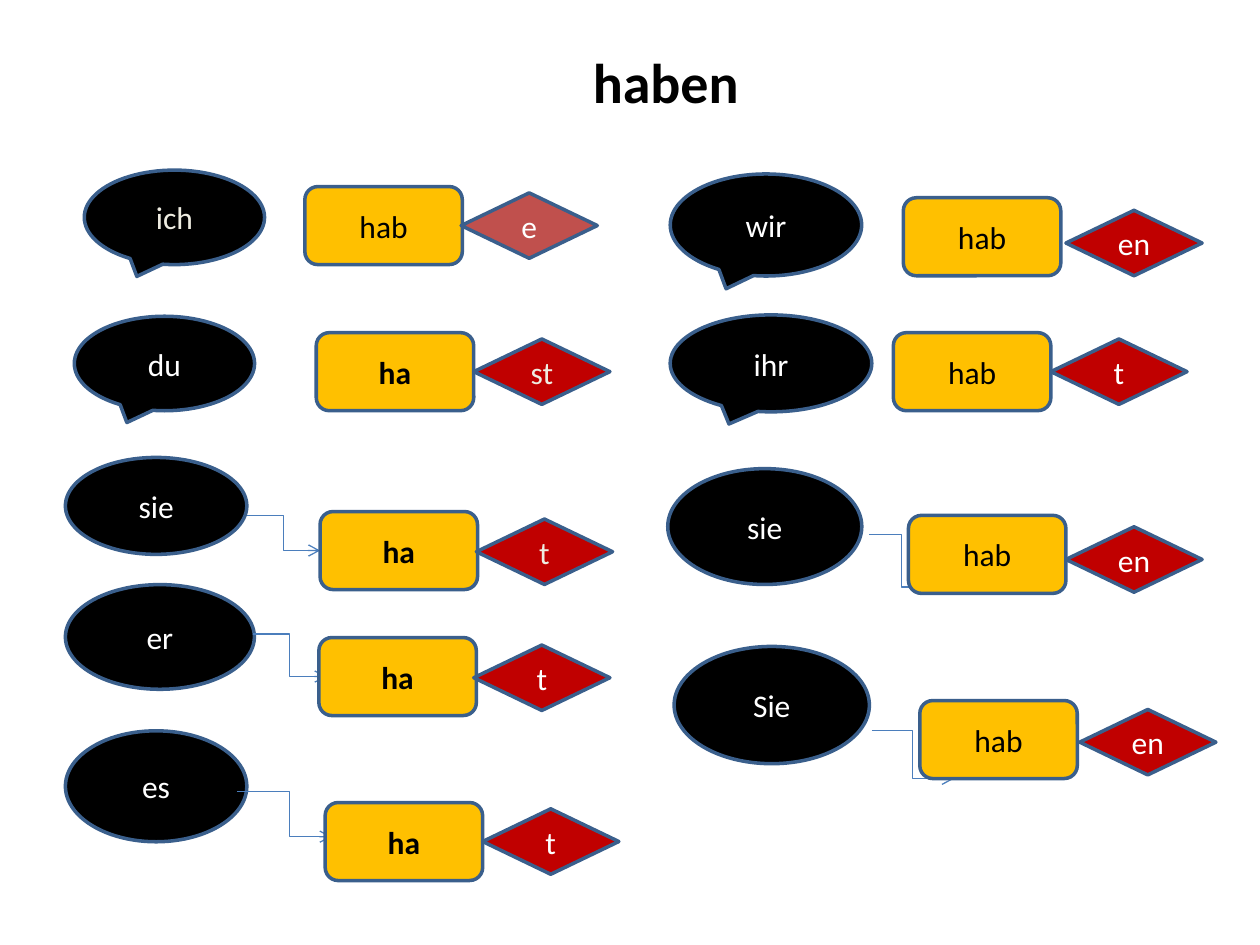
import lxml.etree
import pptx
import pptx.dml.color
import pptx.enum.shapes
import pptx.enum.text
import pptx.oxml.ns
import pptx.util

Pt = pptx.util.Pt
SHAPES = pptx.enum.shapes.MSO_SHAPE

COLOURS = {
    "black": "000000", "white": "FFFFFF", "cream": "EEECE1", "gold": "FFC000",
    "red": "C00000", "rose": "C0504D", "outline": "3A5F8C", "arrow": "4B7EBC",
}
FONT = "Calibri"
CALLOUT, ELLIPSE = SHAPES.OVAL_CALLOUT, SHAPES.OVAL
STEM_SIZE = (90, 44.6)
ENDING_SIZE = (77.8, 37.4)

TITLE = ("haben", (220.3, 23.8, 320.4, 46))

# pronoun, bubble shape, bubble left/top/width/height, text colour
PRONOUNS = [
    ("ich", CALLOUT, (48.2, 97.2, 103, 54), "cream"),
    ("du", CALLOUT, (42.5, 180.7, 103, 54), "white"),
    ("sie", ELLIPSE, (37.4, 261.4, 103.7, 55.4), "white"),
    ("er", ELLIPSE, (37.4, 334.1, 108, 59.8), "white"),
    ("es", ELLIPSE, (37.4, 417.6, 103.7, 63.4), "white"),
    ("wir", CALLOUT, (383, 99.4, 109.4, 58.3), "white"),
    ("ihr", CALLOUT, (383, 180, 115.2, 55.4), "white"),
    ("sie", ELLIPSE, (381.6, 267.8, 110.9, 66.2), "white"),
    ("Sie", ELLIPSE, (385.2, 369.4, 111.6, 67), "white"),
]

# start, end, share of the width at which the line bends
ARROWS = [
    ((141.1, 294.5), (182.9, 314.6), 0.5),
    ((144.7, 362.2), (186.5, 386.6), 0.5),
    ((135.4, 452.2), (189.4, 478.1), 0.56),
    ((496.8, 305.3), (533.5, 335.5), 0.5),
    ((498.2, 417.6), (545, 445), 0.5),
]

# stem, left/top, bold because irregular
STEMS = [
    ("hab", (174.2, 106.6), False),
    ("ha", (180.7, 190.1), True),
    ("ha", (182.9, 292.3), True),
    ("ha", (182.2, 364.3), True),
    ("ha", (185.8, 458.6), True),
    ("hab", (516.2, 113), False),
    ("hab", (510.5, 190.1), False),
    ("hab", (519.1, 294.5), False),
    ("hab", (525.6, 400.3), False),
]

# ending, left/top, fill, text colour
ENDINGS = [
    ("e", (263.5, 110.2), "rose", "white"),
    ("st", (270.7, 193.7), "red", "cream"),
    ("t", (272.2, 296.6), "red", "cream"),
    ("t", (270.7, 368.6), "red", "white"),
    ("t", (275.8, 462.2), "red", "white"),
    ("en", (609.1, 120.2), "red", "white"),
    ("t", (600.5, 193.7), "red", "white"),
    ("en", (609.1, 301), "red", "white"),
    ("en", (617, 405.4), "red", "white"),
]


def rgb(name):
    return pptx.dml.color.RGBColor.from_string(COLOURS[name])


def write(shape, text, size, colour, bold=False):
    shape.text_frame.word_wrap = True
    para = shape.text_frame.paragraphs[0]
    para.text = text
    para.alignment = pptx.enum.text.PP_ALIGN.CENTER
    para.font.name = FONT
    para.font.size = Pt(size)
    para.font.bold = bold
    para.font.color.rgb = rgb(colour)


def add_label(page, kind, frame, fill, text, colour, bold=False):
    """Add an outlined shape with one word centred in it."""
    shape = page.shapes.add_shape(kind, *map(Pt, frame))
    shape.shadow.inherit = False
    shape.fill.solid()
    shape.fill.fore_color.rgb = rgb(fill)
    shape.line.color.rgb = rgb("outline")
    shape.line.width = Pt(2)
    shape.text_frame.vertical_anchor = pptx.enum.text.MSO_ANCHOR.MIDDLE
    write(shape, text, 18, colour, bold)


def add_elbow_arrow(page, start, end, bend):
    arrow = page.shapes.add_connector(
        pptx.enum.shapes.MSO_CONNECTOR.ELBOW, *map(Pt, start + end))
    arrow.line.color.rgb = rgb("arrow")
    arrow.line.width = Pt(0.75)
    qn = pptx.oxml.ns.qn
    properties = arrow._element.spPr
    geometry = properties.find(qn("a:prstGeom"))
    lxml.etree.SubElement(geometry.find(qn("a:avLst")), qn("a:gd"),
                          name="adj1", fmla=f"val {round(bend * 100000)}")
    lxml.etree.SubElement(properties.find(qn("a:ln")), qn("a:tailEnd"), type="arrow")
    lxml.etree.SubElement(properties, qn("a:effectLst"))


def main():
    deck = pptx.Presentation()
    deck.slide_width, deck.slide_height = Pt(720), Pt(540)
    page = deck.slides.add_slide(deck.slide_layouts[6])

    for text, kind, frame, colour in PRONOUNS:
        add_label(page, kind, frame, "black", text, colour)
    for start, end, bend in ARROWS:
        add_elbow_arrow(page, start, end, bend)

    heading, frame = TITLE
    write(page.shapes.add_textbox(*map(Pt, frame)), heading, 32, "black", bold=True)

    for text, corner, bold in STEMS:
        add_label(page, SHAPES.ROUNDED_RECTANGLE, corner + STEM_SIZE,
                  "gold", text, "black", bold)
    for text, corner, fill, colour in ENDINGS:
        add_label(page, SHAPES.FLOWCHART_DECISION, corner + ENDING_SIZE,
                  fill, text, colour)

    deck.save("out.pptx")


if __name__ == "__main__":
    main()
